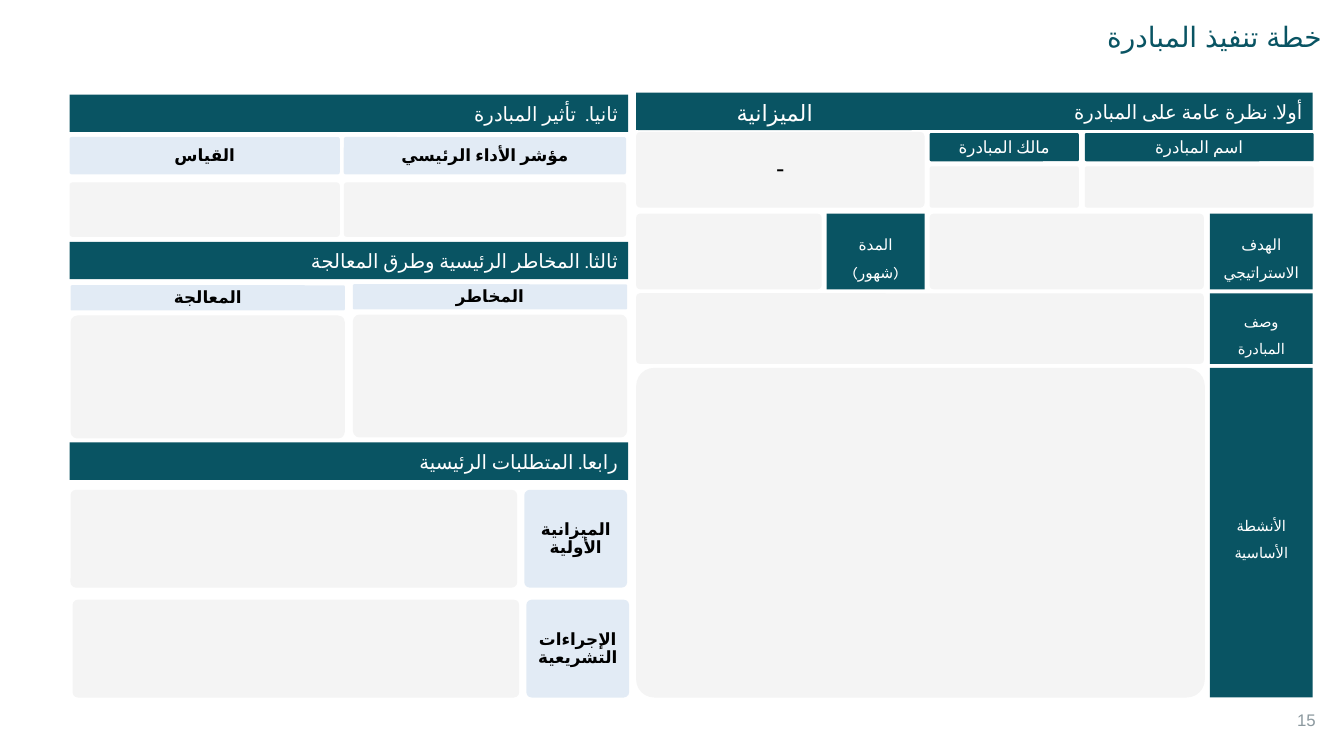
from pptx import Presentation, util as u
from pptx.dml import color
from pptx.enum import lang, shapes, text
from pptx.oxml import ns
from lxml import etree

TEAL, BLUE, GREY = "095463", "437EC1", "B6B6B6"
WHITE, BLACK = "FFFFFF", "000000"
RIGHT, MID = text.PP_ALIGN.RIGHT, text.PP_ALIGN.CENTER
KINDS = shapes.MSO_SHAPE
RECT, ROUND = KINDS.RECTANGLE, KINDS.ROUNDED_RECTANGLE


def rgb(tone):
    return color.RGBColor.from_string(tone)


def write(frame, words, size, tone, align=MID, font="Karla", bold=False,
          line=None, after=None, before=None, rtl=True):
    frame.word_wrap = True
    frame.text = words
    para = frame.paragraphs[0]
    para.alignment = align
    para.line_spacing = line
    para.space_before = before
    para.space_after = after
    if rtl:
        para._p.get_or_add_pPr().set("rtl", "1")
    for run in para.runs:
        run.font.size = u.Pt(size)
        run.font.name = font
        run.font.bold = bold
        run.font.language_id = lang.MSO_LANGUAGE_ID.ARABIC
        run.font.color.rgb = rgb(tone)
        face = etree.SubElement(run._r.get_or_add_rPr(), ns.qn("a:cs"))
        face.set("typeface", font)


def box(slide, place, kind, tone, pale=False):
    shape = slide.shapes.add_shape(kind, *map(u.Inches, place))
    shape.shadow.inherit = False
    shape.line.fill.background()
    shape.fill.solid()
    shape.fill.fore_color.rgb = rgb(tone)
    if pale:
        fill = shape._element.spPr.find(ns.qn("a:solidFill"))
        etree.SubElement(fill[0], ns.qn("a:alpha")).set("val", "15000")
    if kind == ROUND:
        shape.adjustments[0] = 0.055
    shape.text_frame.vertical_anchor = text.MSO_ANCHOR.MIDDLE
    return shape.text_frame


def solid(slide, place, words, size, align, line):
    frame = box(slide, place, RECT, TEAL)
    frame.margin_top, frame.margin_bottom = u.Inches(0.04), 0
    write(frame, words, size, WHITE, align, line=line,
          before=u.Pt(12), after=u.Pt(1))


def band(slide, place, words):
    solid(slide, place, words, 14, RIGHT, 0.9)


def side(slide, place, words, size):
    solid(slide, place, words, size, MID, 1.5)


def head(slide, place, words, size=12, rtl=False):
    frame = box(slide, place, ROUND, TEAL)
    write(frame, words, size, WHITE, before=u.Pt(12), rtl=rtl)


def label(slide, place, words):
    frame = box(slide, place, ROUND, BLUE, True)
    write(frame, words, 12, BLACK, bold=True, line=0.9,
          before=u.Pt(12), after=u.Pt(1))


def field(slide, place):
    return box(slide, place, ROUND, GREY, True)


def title(slide, words):
    shape = slide.shapes.title
    shape.left, shape.top = u.Inches(0.69), u.Inches(0.14)
    shape.width, shape.height = u.Inches(12.52), u.Inches(0.62)
    shape.text_frame.vertical_anchor = text.MSO_ANCHOR.TOP
    write(shape.text_frame, words, 20, TEAL, RIGHT, "Arial")


def number(slide, words):
    shape = slide.shapes.add_textbox(*map(u.Inches, (12.77, 6.99, 0.44, 0.4)))
    shape.text_frame.margin_right = u.Inches(0.16)
    shape.text_frame.margin_left = 0
    write(shape.text_frame, words, 12, "8C999F", RIGHT, "Arial")


def overview(slide):
    left, edge = 6.31, 12
    band(slide, (left, 0.92, 6.71, 0.37), "أولا. نظرة عامة على المبادرة")
    head(slide, (left, 0.95, 2.75, 0.34), "الميزانية", 16, True)
    budget = field(slide, (left, 1.31, 2.86, 0.75))
    write(budget, "-", 18, BLACK, font="Arial", line=0.9,
          before=u.Pt(12), after=u.Pt(1.3))
    for x, wide, words in ((10.76, 2.27, "اسم المبادرة"),
                           (9.22, 1.48, "مالك المبادرة")):
        head(slide, (x, 1.32, wide, 0.28), words)
        field(slide, (x, 1.65, wide, 0.41))
    for x, y, wide, high, words, size in (
            (edge, 2.12, 1.02, 0.75, "الهدف الاستراتيجي", 11),
            (8.2, 2.12, 0.97, 0.75, "المدة (شهور)", 11),
            (edge, 2.91, 1.02, 0.7, "وصف المبادرة", 10.5),
            (edge, 3.65, 1.02, 3.27, "الأنشطة الأساسية", 10.5)):
        side(slide, (x, y, wide, high), words, size)
    for place in ((9.22, 2.12, 2.72, 0.75), (left, 2.12, 1.84, 0.75),
                  (left, 2.91, 5.63, 0.7), (left, 3.65, 5.64, 3.27)):
        field(slide, place)


def details(slide):
    for y, words in ((0.94, "ثانيا.  تأثير المبادرة"),
                     (2.4, "ثالثا. المخاطر الرئيسية وطرق المعالجة"),
                     (4.39, "رابعا. المتطلبات الرئيسية")):
        band(slide, (0.69, y, 5.54, 0.37), words)
    for x, y, wide, high, gap, tall, words in (
            (3.41, 1.36, 2.8, 0.37, 0.45, 0.54, "مؤشر الأداء الرئيسي"),
            (0.69, 1.36, 2.68, 0.37, 0.45, 0.54, "القياس"),
            (3.5, 2.82, 2.72, 0.25, 0.3, 1.22, "المخاطر"),
            (0.7, 2.83, 2.72, 0.25, 0.3, 1.22, "المعالجة")):
        label(slide, (x, y, wide, high), words)
        field(slide, (x, y + gap, wide, tall))
    for x, y, words in ((0.7, 4.86, "الميزانية الأولية"),
                        (0.72, 5.95, "الإجراءات التشريعية")):
        label(slide, (x + 4.5, y, 1.02, 0.97), words)
        field(slide, (x, y, 4.43, 0.97))


def main():
    deck = Presentation()
    deck.slide_width, deck.slide_height = u.Inches(13.33), u.Inches(7.5)
    slide = deck.slides.add_slide(deck.slide_layouts[5])
    title(slide, "خطة تنفيذ المبادرة")
    overview(slide)
    details(slide)
    number(slide, "15")
    deck.save("out.pptx")


if __name__ == "__main__":
    main()
